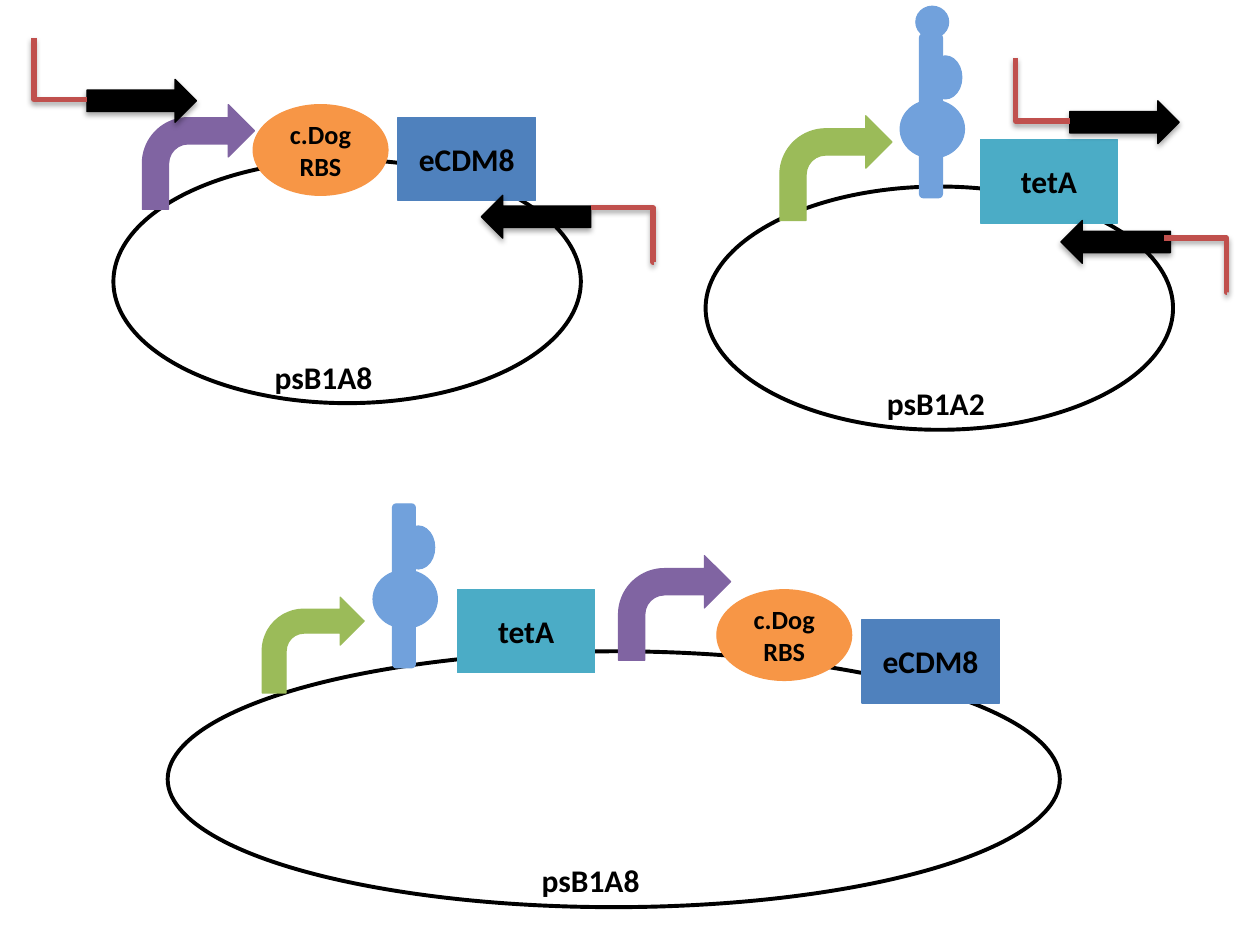
from lxml.etree import SubElement
from pptx import Presentation
from pptx.dml.color import RGBColor
from pptx.enum.shapes import MSO_CONNECTOR, MSO_SHAPE
from pptx.enum.text import MSO_ANCHOR, MSO_AUTO_SIZE, PP_ALIGN
from pptx.oxml.ns import qn
from pptx.util import Pt

COLORS = {
    "black": "000000",
    "stem": "71A1DC",
    "green": "9BBB59",
    "purple": "8064A2",
    "teal": "4BACC6",
    "blue": "4F81BD",
    "orange": "F79646",
    "red": "C0504D",
}
color = {name: RGBColor.from_string(value) for name, value in COLORS.items()}

deck = Presentation()
deck.slide_width, deck.slide_height = Pt(720), Pt(540)
page = deck.slides.add_slide(deck.slide_layouts[6])


def add_part(kind, fill, left, top, width, height, text="", size=18):
    """Add a filled part, or a black ring when fill is None."""
    part = page.shapes.add_shape(kind, Pt(left), Pt(top), Pt(width), Pt(height))
    part.shadow.inherit = False
    if fill:
        part.fill.solid()
        part.fill.fore_color.rgb = color[fill]
    else:
        part.fill.background()
    part.line.color.rgb = color[fill or "black"]
    part.line.width = Pt(0.75 if fill else 2.25)
    if text:
        frame = part.text_frame
        frame.text = text
        frame.vertical_anchor = MSO_ANCHOR.MIDDLE
        para = frame.paragraphs[0]
        para.alignment = PP_ALIGN.CENTER
        font = para.runs[0].font
        font.name, font.size, font.bold = "Calibri", Pt(size), True
        font.color.rgb = color["black"]
    return part


def add_shadow(effects):
    shadow = SubElement(effects, qn("a:outerShdw"), blurRad="40000", dist="23000",
                        dir="5400000", rotWithShape="0")
    shade = SubElement(shadow, qn("a:srgbClr"), val=COLORS["black"])
    SubElement(shade, qn("a:alpha"), val="35000")


# Plasmid rings
for left, top, width, height in [
    (403.2, 106.6, 267.1, 139),
    (64.8, 91.4, 267.1, 139),
    (95.8, 372.2, 509.8, 146.2),
]:
    add_part(MSO_SHAPE.OVAL, None, left, top, width, height)

# Stem loops
for left, top in [(525.5, 19.4), (224.3, 288)]:
    add_part(MSO_SHAPE.ROUNDED_RECTANGLE, "stem", left, top, 13, 93.6)
    add_part(MSO_SHAPE.OVAL, "stem", left - 11.1, top + 37.8, 36.7, 33.1)
    add_part(MSO_SHAPE.OVAL, "stem", left + 5.4, top + 12.6, 18.7, 24.5)
add_part(MSO_SHAPE.OVAL, "stem", 523.4, 3.6, 18.7, 18)

# Promoters
for fill, left, top, width, height in [
    ("green", 445.7, 66.2, 64, 59.8),
    ("purple", 81.4, 59.8, 64, 59.8),
    ("green", 149.8, 341.3, 58.3, 54.7),
    ("purple", 353.5, 317.5, 64, 59.8),
]:
    add_part(MSO_SHAPE.BENT_ARROW, fill, left, top, width, height)

# Genes
for text, fill, left, top in [
    ("tetA", "teal", 560.2, 79.9),
    ("eCDM8", "blue", 227.5, 67),
    ("tetA", "teal", 261.4, 337),
    ("eCDM8", "blue", 492.5, 354.2),
]:
    add_part(MSO_SHAPE.RECTANGLE, fill, left, top, 78.5, 47.5, text)

# Ribosome binding sites
for left, top in [(144.7, 59.8), (409.7, 337)]:
    add_part(MSO_SHAPE.OVAL, "orange", left, top, 77, 51.8, "c.Dog RBS", 15)

# Plasmid names
for text, left, top in [
    ("psB1A8", 149.8, 200.9),
    ("psB1A2", 499.7, 216),
    ("psB1A8", 302.4, 488.2),
]:
    box = page.shapes.add_textbox(Pt(left), Pt(top), Pt(71.3), Pt(28.8))
    frame = box.text_frame
    frame.word_wrap = False
    frame.auto_size = MSO_AUTO_SIZE.SHAPE_TO_FIT_TEXT
    frame.text = text
    font = frame.paragraphs[0].runs[0].font
    font.name, font.size, font.bold = "Calibri", Pt(18), True
    font.color.rgb = color["black"]

# Primers
for left, top, rotation in [
    (275, 111.6, 180),
    (49.7, 45.4, 0),
    (606.2, 126, 180),
    (611.3, 57.6, 0),
]:
    primer = add_part(MSO_SHAPE.RIGHT_ARROW, "black", left, top, 62.6, 24.5)
    primer.rotation = rotation
    add_shadow(primer._element.spPr.find(qn("a:effectLst")))

# Primer tails: the bend is given in thousandths of a percent of the width
for start_x, start_y, end_x, end_y, bend in [
    (19.4, 21.6, 49.7, 56.9, 0),
    (580.3, 33.1, 611.3, 69.1, 0),
    (373.7, 149.8, 337.7, 118.8, 1400),
    (701.3, 167, 665.3, 136.1, 1400),
]:
    tail = page.shapes.add_connector(
        MSO_CONNECTOR.ELBOW, Pt(start_x), Pt(start_y), Pt(end_x), Pt(end_y))
    tail.line.color.rgb = color["red"]
    tail.line.width = Pt(3)
    properties = tail._element.spPr
    guides = properties.find(qn("a:prstGeom")).find(qn("a:avLst"))
    SubElement(guides, qn("a:gd"), name="adj1", fmla=f"val {bend}")
    add_shadow(SubElement(properties, qn("a:effectLst")))

deck.save("out.pptx")
